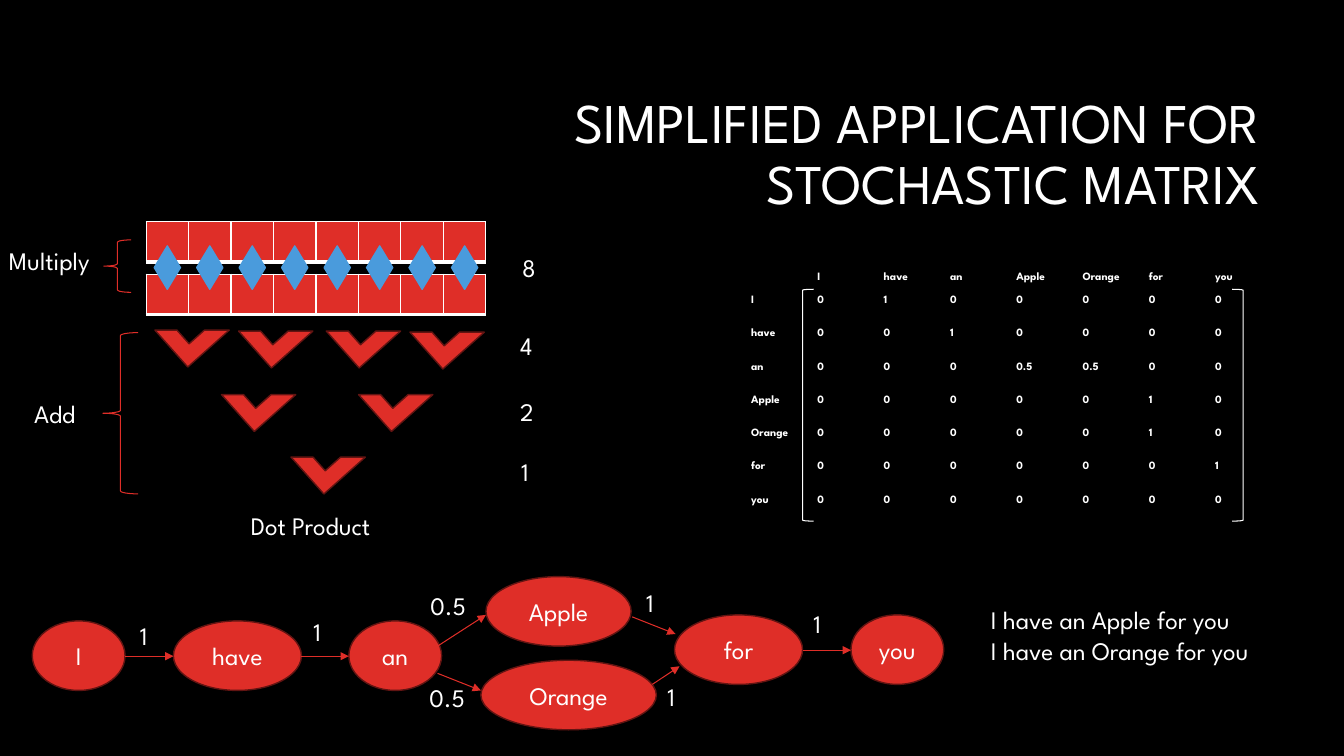
"""Build the slide on a simplified application for a stochastic matrix."""
from lxml import etree
from pptx import Presentation
from pptx.dml.color import RGBColor
from pptx.enum.shapes import MSO_CONNECTOR, MSO_SHAPE
from pptx.enum.text import MSO_ANCHOR, PP_ALIGN
from pptx.oxml.ns import qn
from pptx.util import Inches, Pt

STRAIGHT = MSO_CONNECTOR.STRAIGHT
OVAL, DIAMOND, CHEVRON = MSO_SHAPE.OVAL, MSO_SHAPE.DIAMOND, MSO_SHAPE.HALF_FRAME
BRACE, BRACKET = MSO_SHAPE.LEFT_BRACE, MSO_SHAPE.LEFT_BRACKET
TOP, MIDDLE = MSO_ANCHOR.TOP, MSO_ANCHOR.MIDDLE
LEFT, CENTER, RIGHT = PP_ALIGN.LEFT, PP_ALIGN.CENTER, PP_ALIGN.RIGHT

FONT = "League Spartan"
COLORS = {"black": "000000", "white": "FFFFFF", "red": "DF2E28",
          "dark_red": "621412", "blue": "4A9BDC"}
NO_STYLE = "{2D5ABB26-0587-4C30-8999-92F81FD0307C}"

TITLE = "SIMPLIFIED APPLICATION FOR STOCHASTIC MATRIX"
SENTENCES = ["I have an Apple for you", "I have an Orange for you"]
WORDS = ["I", "have", "an", "Apple", "Orange", "for", "you"]
MATRIX = [
    ["0", "1", "0", "0", "0", "0", "0"],
    ["0", "0", "1", "0", "0", "0", "0"],
    ["0", "0", "0", "0.5", "0.5", "0", "0"],
    ["0", "0", "0", "0", "0", "1", "0"],
    ["0", "0", "0", "0", "0", "1", "0"],
    ["0", "0", "0", "0", "0", "0", "1"],
    ["0", "0", "0", "0", "0", "0", "0"],
]
NODE_H = 0.69
NODES = [(0.32, 6.16, 0.92), (1.72, 6.16, 1.27), (3.46, 6.16, 0.92),
         (4.82, 5.72, 1.44), (4.77, 6.55, 1.74), (6.69, 6.1, 1.27),
         (8.44, 6.1, 0.92)]
EDGES = [
    ((1.24, 6.51), (1.72, 6.51), "1", (1.29, 6.1)),
    ((2.99, 6.51), (3.46, 6.51), "1", (3.01, 6.07)),
    ((4.34, 6.41), (4.82, 6.1), "0.5", (4.17, 5.81)),
    ((4.34, 6.68), (4.77, 6.85), "0.5", (4.16, 6.72)),
    ((6.27, 6.12), (6.7, 6.29), "1", (6.31, 5.78)),
    ((6.47, 6.79), (6.74, 6.61), "1", (6.52, 6.71)),
    ((7.96, 6.45), (8.44, 6.45), "1", (7.97, 5.99)),
]
LABELS = [
    ("Dot Product", 2.39, 5.01, 1.69), ("Multiply", -0.01, 2.38, 1.21),
    ("Add", 0.24, 3.9, 0.83), ("8", 5.08, 2.45, 0.44),
    ("4", 5.06, 3.23, 0.44), ("2", 5.06, 3.88, 0.44), ("1", 5.07, 4.48, 0.44),
]
BRACES = [(1.03, 2.38, 0.27, 0.52), (1.02, 3.3, 0.35, 1.6)]
ADDERS = [(1.66, 3.0), (2.49, 3.01), (3.36, 3.01), (4.19, 3.02),
          (2.32, 3.64), (3.68, 3.64), (3.01, 4.26)]
STRIP_X, STRIP_TOPS, STRIP_W, STRIP_H, LANES = 1.45, (2.2, 2.72), 3.37, 0.4, 8
MATRIX_BOX = (7.35, 2.65, 5.26, 2.53)
HEADER_H, ROW_H = 0.22, 0.33
BORDERS = {"lnL": 1, "lnR": 1, "lnT": 1, "lnB": 3}


def rgb(name):
    return RGBColor.from_string(COLORS[name])


def write(tf, lines, size=18, align=LEFT, anchor=TOP, spacing=None, bold=False):
    tf.word_wrap = True
    tf.vertical_anchor = anchor
    for i, line in enumerate(lines):
        p = tf.paragraphs[0] if i == 0 else tf.add_paragraph()
        p.alignment, p.line_spacing = align, spacing
        r = p.add_run()
        r.text = line
        for key, value in {"name": FONT, "size": Pt(size), "bold": bold}.items():
            setattr(r.font, key, value)
        r.font.color.rgb = rgb("white")


def add_text(s, lines, x, y, w, h=0.4, **fmt):
    box = s.shapes.add_textbox(*map(Inches, (x, y, w, h)))
    write(box.text_frame, lines, **fmt)


def add_shape(s, kind, box, line, width, fill=None):
    sp = s.shapes.add_shape(kind, *map(Inches, box))
    sp.shadow.inherit = False
    sp.line.color.rgb, sp.line.width = rgb(line), Pt(width)
    if fill:
        sp.fill.solid()
        sp.fill.fore_color.rgb = rgb(fill)
    else:
        sp.fill.background()
    return sp


def add_arrow(s, start, end):
    cx = s.shapes.add_connector(STRAIGHT, *map(Inches, start + end))
    cx.line.color.rgb, cx.line.width = rgb("red"), Pt(0.75)
    etree.SubElement(cx.line._get_or_add_ln(), qn("a:tailEnd"), type="triangle")
    etree.SubElement(cx._element.spPr, qn("a:effectLst"))


def add_grid(s, rows, cols, box):
    frame = s.shapes.add_table(rows, cols, *map(Inches, box))
    table = frame.table
    table.first_row = table.horz_banding = False
    table._tbl.tblPr.find(qn("a:tableStyleId")).text = NO_STYLE
    for col in table.columns:
        col.width = Inches(box[2] / cols)
    return table


def add_strip(s, y):
    table = add_grid(s, 1, LANES, (STRIP_X, y, STRIP_W, STRIP_H))
    for cell in table.iter_cells():
        tc_pr = cell._tc.get_or_add_tcPr()
        for side, width in BORDERS.items():
            ln = etree.SubElement(tc_pr, qn("a:" + side), w=str(Pt(width)))
            fill = etree.SubElement(ln, qn("a:solidFill"))
            etree.SubElement(fill, qn("a:srgbClr"), val=COLORS["white"])
        cell.fill.solid()
        cell.fill.fore_color.rgb = rgb("red")


def add_matrix(s):
    grid = [[""] + WORDS] + [[w] + row for w, row in zip(WORDS, MATRIX)]
    table = add_grid(s, len(grid), len(grid[0]), MATRIX_BOX)
    for i, values in enumerate(grid):
        table.rows[i].height = Inches(ROW_H if i else HEADER_H)
        for j, value in enumerate(values):
            cell = table.cell(i, j)
            cell.fill.background()
            if value:
                write(cell.text_frame, [value], size=8, bold=True)
            else:
                end = cell.text_frame.paragraphs[0]._p.get_or_add_endParaRPr()
                end.set("sz", "800")
    for x, flip in ((7.96, False), (12.22, True)):
        sp = add_shape(s, BRACKET, (x, 2.87, 0.11, 2.3), "white", 0.75)
        if flip:
            sp._element.spPr.find(qn("a:xfrm")).set("flipH", "1")


def add_dot_product(s):
    for y in STRIP_TOPS:
        add_strip(s, y)
    for box in BRACES:
        add_shape(s, BRACE, box, "red", 0.75)
    for x, y in ADDERS:
        sp = add_shape(s, CHEVRON, (x, y, 0.49, 0.55), "dark_red", 1, "red")
        sp.rotation = 228.3
    for lane in range(LANES):
        x = 1.53 + lane * STRIP_W / LANES
        add_shape(s, DIAMOND, (x, 2.44, 0.26, 0.43), "blue", 1, "blue")
    for text, x, y, w in LABELS:
        add_text(s, [text], x, y, w)


def add_chain(s):
    for word, (x, y, w) in zip(WORDS, NODES):
        sp = add_shape(s, OVAL, (x, y, w, NODE_H), "dark_red", 1, "red")
        write(sp.text_frame, [word], align=CENTER, anchor=MIDDLE)
    for start, end, weight, (x, y) in EDGES:
        add_arrow(s, start, end)
        add_text(s, [weight], x, y, 0.6)


def main():
    prs = Presentation()
    prs.slide_width, prs.slide_height = Inches(13.33), Inches(7.5)
    s = prs.slides.add_slide(prs.slide_layouts[6])
    s.background.fill.solid()
    s.background.fill.fore_color.rgb = rgb("black")
    add_text(s, [TITLE], 3.17, 0.84, 9.42, 1.41, size=40, align=RIGHT,
             anchor=MIDDLE, spacing=0.9)
    add_text(s, SENTENCES, 9.73, 5.95, 3.3, 0.71)
    add_chain(s)
    add_matrix(s)
    add_dot_product(s)
    prs.save("out.pptx")


if __name__ == "__main__":
    main()
